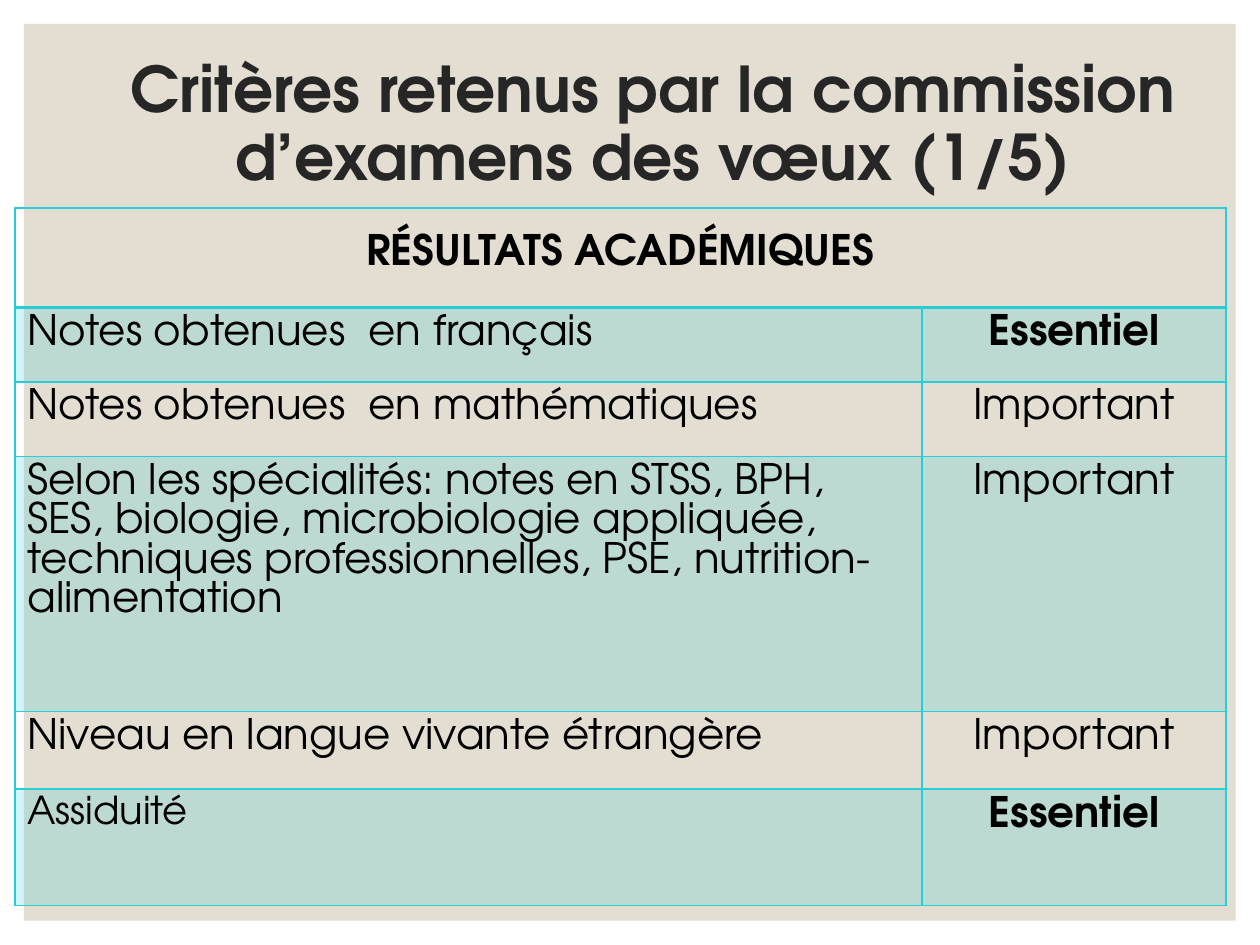
from dataclasses import dataclass

from lxml import etree
from pptx import Presentation
from pptx import util as u
from pptx.dml.color import RGBColor
from pptx.enum import shapes, text
from pptx.oxml.ns import qn


@dataclass(frozen=True)
class Theme:
    font: str = "TeX Gyre Adventor"
    panel: str = "E3DED1"
    title: str = "262626"
    body: str = "000000"
    accent: str = "27CED7"
    band_alpha: int = 20
    title_size: int = 36
    body_size: int = 24
    small_size: int = 22
    title_leading: float = 1.08
    body_leading: float = 0.94
    header_leading: float = 1.41


class SlideBuilder:
    def __init__(self, s, theme):
        self.s, self.theme = s, theme

    def set_text(self, tf, words, size, color, leading, bold=False, centred=True):
        """Set one paragraph; leading is a multiple of the type size."""
        tf.text = words
        p = tf.paragraphs[0]
        p.alignment = text.PP_ALIGN.CENTER if centred else text.PP_ALIGN.LEFT
        p.line_spacing = u.Pt(round(size * leading, 1))
        p.space_before = p.space_after = u.Pt(0)
        for r in p.runs:
            r.font.name, r.font.size, r.font.bold = self.theme.font, u.Pt(size), bold
            r.font.color.rgb = RGBColor.from_string(color)

    def panel(self, left, top, width, height):
        sp = self.s.shapes.add_shape(shapes.MSO_SHAPE.RECTANGLE, left, top, width, height)
        sp.shadow.inherit = False
        sp.fill.solid()
        sp.fill.fore_color.rgb = RGBColor.from_string(self.theme.panel)
        sp.line.fill.background()
        self.s.shapes._spTree.insert(2, sp._element)  # behind the title

    def title(self, words, left, top, width, height):
        t, sp = self.theme, self.s.shapes.title
        sp.left, sp.top, sp.width, sp.height = left, top, width, height
        tf = sp.text_frame
        tf.word_wrap = True
        tf.auto_size = text.MSO_AUTO_SIZE.NONE
        tf.vertical_anchor = text.MSO_ANCHOR.MIDDLE
        self.set_text(tf, words, t.title_size, t.title, t.title_leading, bold=True)

    def fill_cell(self, cell, banded):
        if not banded:
            cell.fill.background()
            return
        cell.fill.solid()
        cell.fill.fore_color.rgb = RGBColor.from_string(self.theme.accent)
        color = cell._tc.tcPr.find(".//" + qn("a:srgbClr"))
        etree.SubElement(color, qn("a:alpha"), val=str(self.theme.band_alpha * 1000))

    def border_cell(self, cell, top=1, bottom=1):
        """Draw the four borders, with widths in points."""
        tcPr = cell._tc.get_or_add_tcPr()
        widths = {"lnL": 1, "lnR": 1, "lnT": top, "lnB": bottom}
        for i, (side, width) in enumerate(widths.items()):
            ln = etree.Element(qn("a:" + side), w=str(u.Pt(width)))
            fill = etree.SubElement(ln, qn("a:solidFill"))
            etree.SubElement(fill, qn("a:srgbClr"), val=self.theme.accent)
            tcPr.insert(i, ln)

    def criteria_table(self, header, rows, left, top, widths, heights):
        """rows holds (criterion, type size, weight given to it)."""
        t = self.theme
        frame = self.s.shapes.add_table(len(heights), len(widths), left, top,
                                        sum(widths), sum(heights))
        table = frame.table
        table.first_row = table.horz_banding = False
        for column, width in zip(table.columns, widths):
            column.width = width
        for i, (row, height) in enumerate(zip(table.rows, heights)):
            row.height = height
            for cell in row.cells:
                self.fill_cell(cell, banded=i % 2 == 1)
                self.border_cell(cell, top=2 if i == 1 else 1, bottom=2 if i == 0 else 1)

        table.cell(0, 0).merge(table.cell(0, 1))
        self.set_text(table.cell(0, 0).text_frame, header, t.body_size, t.body,
                      t.header_leading, bold=True)
        for i, (criterion, size, weight) in enumerate(rows, start=1):
            self.set_text(table.cell(i, 0).text_frame, criterion, size, t.body,
                          t.body_leading, centred=False)
            self.set_text(table.cell(i, 1).text_frame, weight, t.body_size, t.body,
                          t.body_leading, bold=weight == "Essentiel")


def main():
    theme = Theme()
    prs = Presentation()
    prs.slide_width, prs.slide_height = u.Cm(25.4), u.Cm(19.05)
    page = SlideBuilder(prs.slides.add_slide(prs.slide_layouts[5]), theme)

    page.panel(u.Cm(0.48), u.Cm(0.48), u.Cm(24.43), u.Cm(18.08))
    page.title("Critères retenus par la commission d’examens des vœux (1/5)",
               u.Cm(2.26), u.Cm(0.58), u.Cm(21.8), u.Cm(3.89))
    rows = [
        ("Notes obtenues  en français", theme.body_size, "Essentiel"),
        ("Notes obtenues  en mathématiques", theme.body_size, "Important"),
        ("Selon les spécialités: notes en STSS, BPH, SES, biologie, microbiologie "
         "appliquée, techniques professionnelles, PSE, nutrition-alimentation",
         theme.body_size, "Important"),
        ("Niveau en langue vivante étrangère", theme.body_size, "Important"),
        ("Assiduité", theme.small_size, "Essentiel"),
    ]
    page.criteria_table(
        "RÉSULTATS ACADÉMIQUES", rows, u.Cm(0.3), u.Cm(4.19),
        widths=[u.Cm(18.29), u.Cm(6.12)],
        heights=[u.Cm(h) for h in (2.01, 1.5, 1.5, 5.14, 1.57, 2.34)])
    prs.save("out.pptx")


if __name__ == "__main__":
    main()
